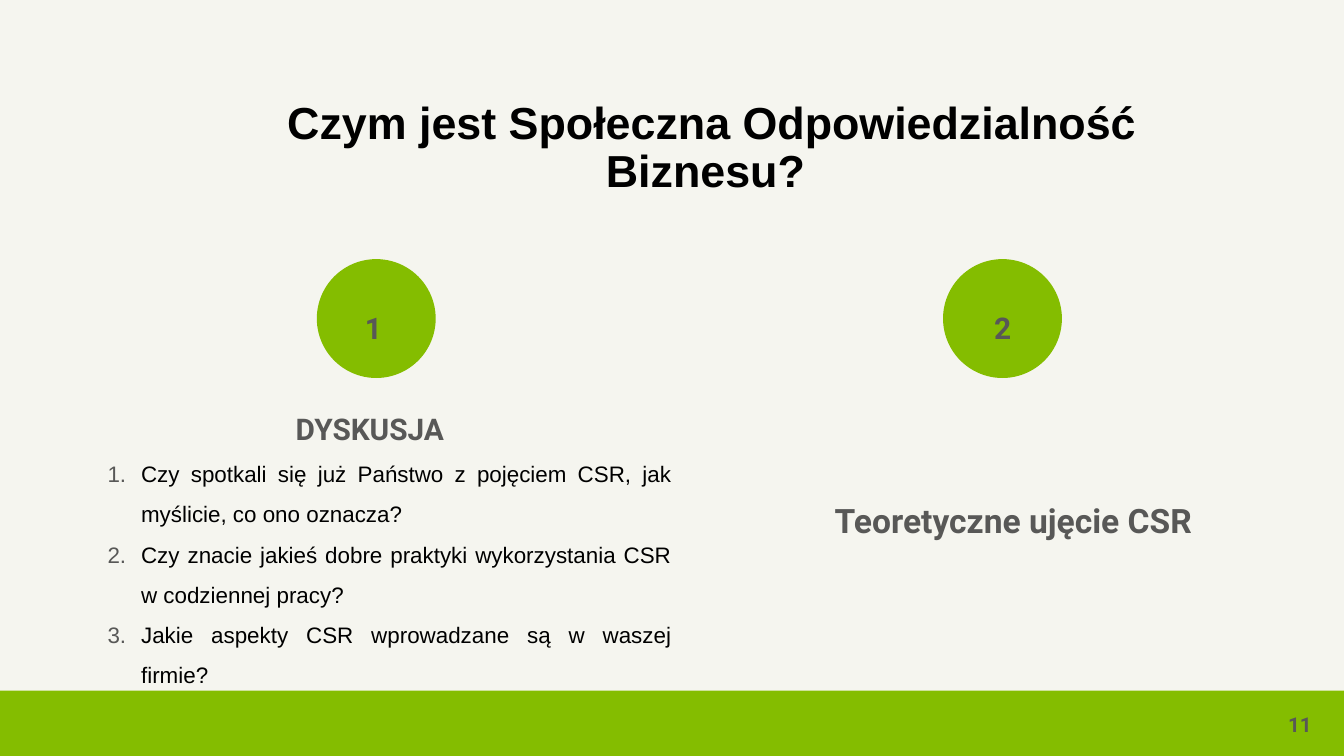
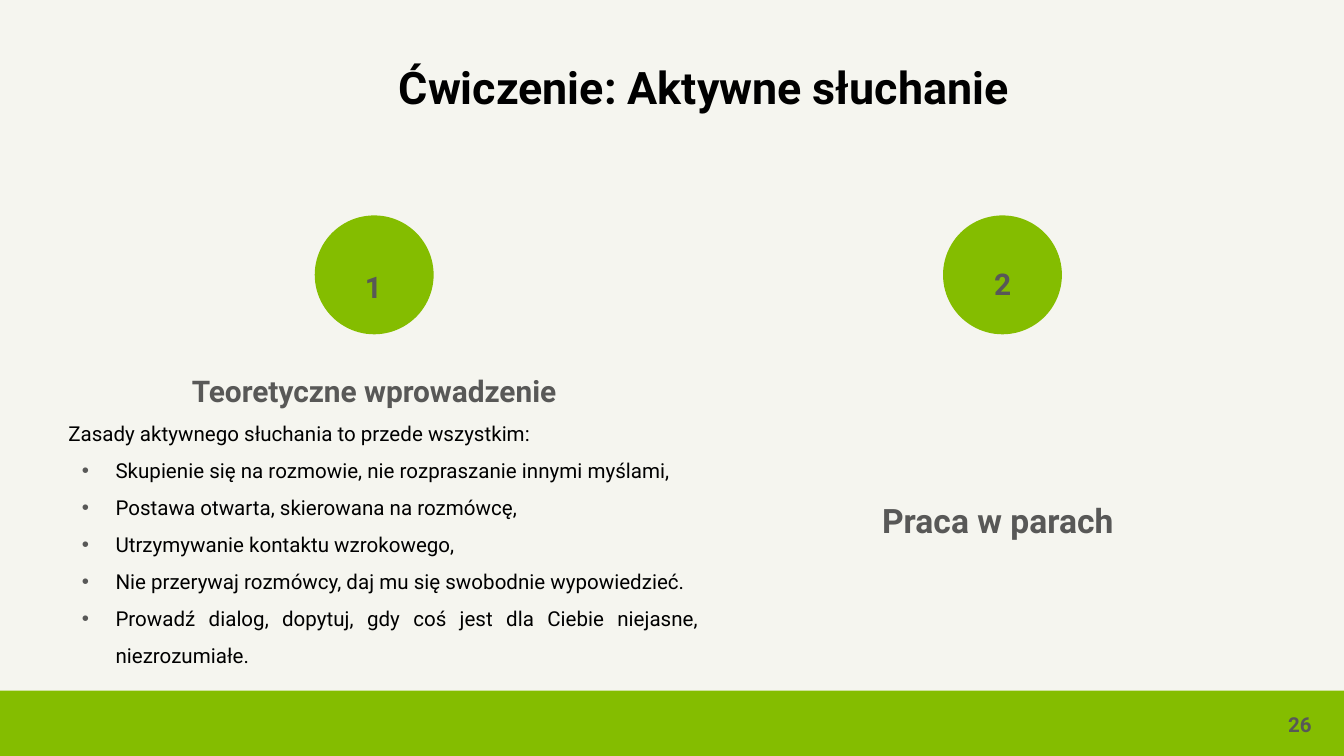
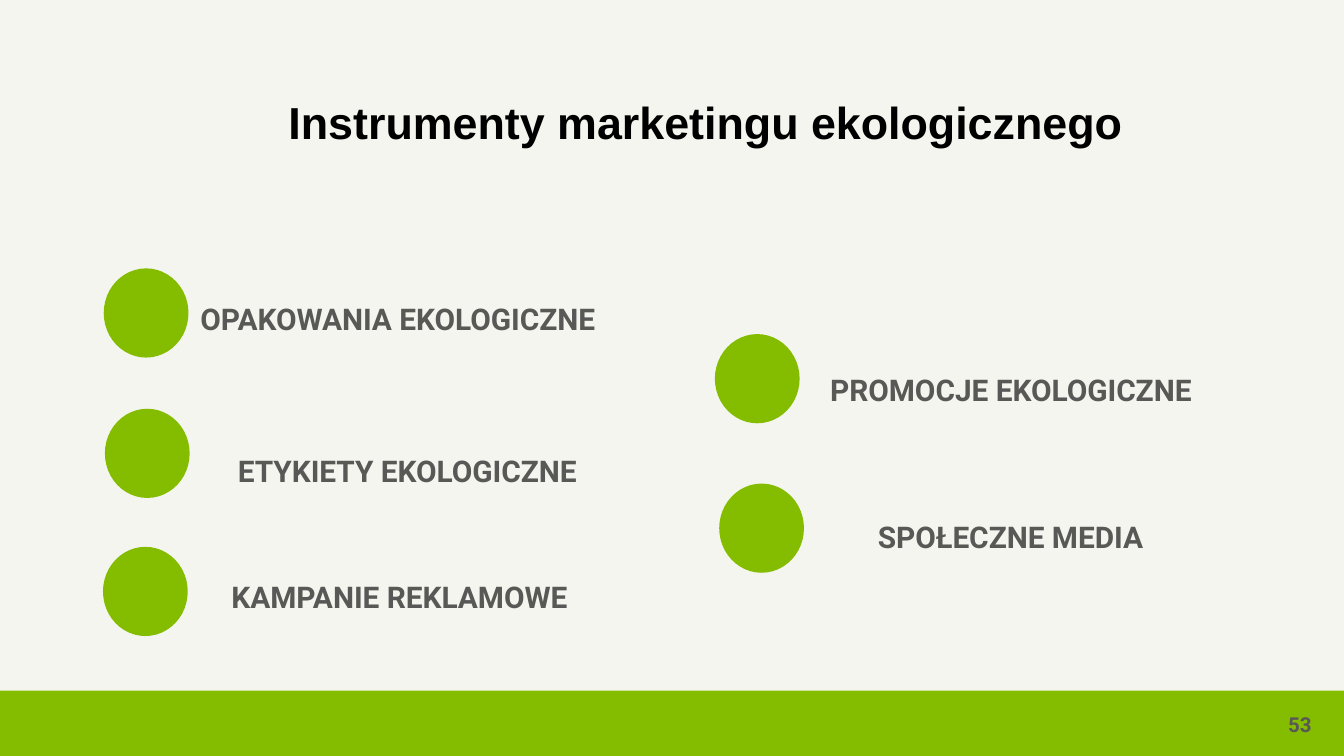
from dataclasses import dataclass
from typing import NamedTuple, Optional

from lxml.etree import SubElement
from pptx import Presentation
from pptx.dml.color import RGBColor
from pptx.enum.shapes import MSO_SHAPE
from pptx.enum.text import MSO_ANCHOR, MSO_AUTO_SIZE, PP_ALIGN
from pptx.oxml.ns import qn
from pptx.util import Pt


@dataclass(frozen=True)
class Theme:
    background: str = "F5F5EF"
    green: str = "84BD00"
    grey: str = "585857"
    black: str = "000000"
    roboto: str = "Roboto"
    arial: str = "Arial"
    title_size: float = 24
    topic_size: float = 18
    heading_size: float = 16
    list_size: float = 12
    small_size: float = 11


THEME = Theme()


class Box(NamedTuple):
    left: float
    top: float
    width: float
    height: float


@dataclass(frozen=True)
class Style:
    size: float
    color: str = THEME.grey
    font: str = THEME.roboto
    bold: bool = True
    align: PP_ALIGN = PP_ALIGN.CENTER
    spacing: float = 1.4
    margin: float = 0
    indent: float = 0
    bullet: Optional[str] = None


class Line(NamedTuple):
    text: str
    style: Style


class Badge(NamedTuple):
    number: str
    circle_left: float
    circle_top: float
    label_left: float
    label_top: float


class Instrument(NamedTuple):
    text: str
    oval_left: float
    oval_top: float
    label_left: float
    label_top: float


WIDTH, HEIGHT = 720, 405
BAND = Box(0, 370, WIDTH, HEIGHT - 370)
NUMBER_BOX = Box(659.5, 381, 43.2, 14.4)
TITLE_WIDTH, TITLE_HEIGHT = 510.5, 57
CIRCLE = 63.7
BADGE_LABEL = (30.2, 19.4)
OVAL = (45.4, 47.8)
INSTRUMENT_LABEL = (319.7, 29.5)

TITLE_ARIAL = Style(THEME.title_size, THEME.black, THEME.arial, spacing=0.9)
TITLE_ROBOTO = Style(THEME.title_size, THEME.black, spacing=0.9)
HEADING = Style(THEME.heading_size)
TOPIC = Style(THEME.topic_size)
TOPIC_LEFT = Style(THEME.topic_size, align=PP_ALIGN.LEFT)
BADGE_NUMBER = Style(THEME.heading_size, spacing=1.25)
PAGE_NUMBER = Style(THEME.small_size, align=PP_ALIGN.RIGHT, spacing=1)
QUESTION = Style(THEME.list_size, THEME.black, THEME.arial, False,
                 PP_ALIGN.JUSTIFY, 1.5, 35.3, -18, "1.")
INTRODUCTION = Style(THEME.small_size, THEME.black, THEME.roboto, False,
                     PP_ALIGN.JUSTIFY, 1.5, 10)
RULE = Style(THEME.small_size, THEME.black, THEME.roboto, False,
             PP_ALIGN.JUSTIFY, 1.5, 35.3, -18, "•")


def place(shape, box: Box) -> None:
    shape.left, shape.top, shape.width, shape.height = map(Pt, box)


def add_bullet(properties, bullet: Optional[str]) -> None:
    if bullet is None:
        SubElement(properties, qn("a:buNone"))
        return
    color = SubElement(properties, qn("a:buClr"))
    SubElement(color, qn("a:srgbClr"), val=THEME.grey)
    SubElement(properties, qn("a:buFont"), typeface=THEME.arial)
    if bullet == "1.":
        SubElement(properties, qn("a:buAutoNum"), type="arabicPeriod")
    else:
        SubElement(properties, qn("a:buChar"), char=bullet)


def write_line(para, line: Line) -> None:
    style = line.style
    para.text = line.text
    para.alignment = style.align
    para.line_spacing = style.spacing
    para.space_before = para.space_after = Pt(0)
    properties = para._p.get_or_add_pPr()
    properties.set("marL", str(Pt(style.margin)))
    properties.set("indent", str(Pt(style.indent)))
    add_bullet(properties, style.bullet)
    para.font.name = style.font
    para.font.size = Pt(style.size)
    para.font.bold = style.bold
    para.font.color.rgb = RGBColor.from_string(style.color)


def write_lines(shape, box: Box, lines: list[Line],
                anchor: MSO_ANCHOR = MSO_ANCHOR.TOP) -> None:
    place(shape, box)
    frame = shape.text_frame
    frame.word_wrap = True
    frame.auto_size = MSO_AUTO_SIZE.NONE
    frame.vertical_anchor = anchor
    frame.margin_left = frame.margin_right = Pt(0)
    frame.margin_top = frame.margin_bottom = Pt(0)
    for index, line in enumerate(lines):
        para = frame.add_paragraph() if index else frame.paragraphs[0]
        write_line(para, line)


def add_label(page, box: Box, text: str, style: Style,
              anchor: MSO_ANCHOR = MSO_ANCHOR.TOP) -> None:
    label = page.shapes.add_textbox(*map(Pt, box))
    write_lines(label, box, [Line(text, style)], anchor)


def add_green(page, kind: MSO_SHAPE, box: Box) -> None:
    shape = page.shapes.add_shape(kind, *map(Pt, box))
    shape.shadow.inherit = False
    shape.fill.solid()
    shape.fill.fore_color.rgb = RGBColor.from_string(THEME.green)
    shape.line.fill.background()


def add_page(deck, layout: int, title: Line, left: float, top: float, number: str):
    page = deck.slides.add_slide(deck.slide_layouts[layout])
    write_lines(page.shapes.title, Box(left, top, TITLE_WIDTH, TITLE_HEIGHT), [title])
    add_green(page, MSO_SHAPE.RECTANGLE, BAND)
    add_label(page, NUMBER_BOX, number, PAGE_NUMBER, MSO_ANCHOR.MIDDLE)
    return page


def add_badges(page, badges: list[Badge]) -> None:
    for badge in badges:
        add_green(page, MSO_SHAPE.OVAL,
                  Box(badge.circle_left, badge.circle_top, CIRCLE, CIRCLE))
        add_label(page, Box(badge.label_left, badge.label_top, *BADGE_LABEL),
                  badge.number, BADGE_NUMBER)


def build_definition(deck) -> None:
    title = Line("Czym jest Społeczna Odpowiedzialność Biznesu? ", TITLE_ARIAL)
    page = add_page(deck, 3, title, 126, 54, "11")
    add_badges(page, [Badge("1", 169.7, 138.8, 185, 161.3),
                      Badge("2", 505.2, 138.8, 522, 161.3)])
    questions = [
        "Czy spotkali się już Państwo z pojęciem CSR, jak myślicie, co ono oznacza?",
        "Czy znacie jakieś dobre praktyki wykorzystania CSR w codziennej pracy? ",
        "Jakie aspekty CSR wprowadzane są w waszej firmie? ",
    ]
    write_lines(page.placeholders[1], Box(40.3, 212.4, 319.7, 164),
                [Line("DYSKUSJA ", HEADING)]
                + [Line(question, QUESTION) for question in questions])
    write_lines(page.placeholders[2], Box(447.1, 259.2, 212.4, 110),
                [Line("Teoretyczne ujęcie CSR", TOPIC_LEFT)])


def build_exercise(deck) -> None:
    title = Line("Ćwiczenie: Aktywne słuchanie", TITLE_ROBOTO)
    page = add_page(deck, 3, title, 121.7, 35.3, "26")
    add_badges(page, [Badge("1", 168.6, 115.4, 185, 139),
                      Badge("2", 505.2, 115.4, 522, 137.7)])
    rules = [
        "Skupienie się na rozmowie, nie rozpraszanie innymi myślami, ",
        "Postawa otwarta, skierowana na rozmówcę, ",
        "Utrzymywanie kontaktu wzrokowego, ",
        "Nie przerywaj rozmówcy, daj mu się swobodnie wypowiedzieć.",
        "Prowadź dialog, dopytuj, gdy coś jest dla Ciebie niejasne, niezrozumiałe.",
    ]
    write_lines(page.placeholders[1], Box(26.6, 192.2, 347.8, 164),
                [Line("Teoretyczne wprowadzenie", HEADING),
                 Line("Zasady aktywnego słuchania to przede wszystkim: ", INTRODUCTION)]
                + [Line(rule, RULE) for rule in rules])
    write_lines(page.placeholders[2], Box(430.6, 259.2, 212.4, 110),
                [Line("Praca w parach ", TOPIC)])


def build_instruments(deck) -> None:
    title = Line("Instrumenty marketingu ekologicznego ", TITLE_ARIAL)
    page = add_page(deck, 1, title, 126, 54, "53")
    instruments = [
        Instrument("OPAKOWANIA EKOLOGICZNE ", 55.6, 143.8, 55.4, 153.4),
        Instrument("ETYKIETY EKOLOGICZNE ", 56.2, 219, 60.5, 234.7),
        Instrument("KAMPANIE REKLAMOWE ", 55.2, 293, 56.2, 302.4),
        Instrument("PROMOCJE EKOLOGICZNE ", 383, 179, 383.8, 191.5),
        Instrument("SPOŁECZNE MEDIA", 385.3, 259.1, 381.6, 270),
    ]
    for index, instrument in enumerate(instruments):
        add_green(page, MSO_SHAPE.OVAL,
                  Box(instrument.oval_left, instrument.oval_top, *OVAL))
        box = Box(instrument.label_left, instrument.label_top, *INSTRUMENT_LABEL)
        if index == 0:
            write_lines(page.placeholders[1], box, [Line(instrument.text, HEADING)])
        else:
            add_label(page, box, instrument.text, HEADING)


def main() -> None:
    deck = Presentation()
    deck.slide_width, deck.slide_height = Pt(WIDTH), Pt(HEIGHT)
    fill = deck.slide_master.background.fill
    fill.solid()
    fill.fore_color.rgb = RGBColor.from_string(THEME.background)
    build_definition(deck)
    build_exercise(deck)
    build_instruments(deck)
    deck.save("out.pptx")


if __name__ == "__main__":
    main()
